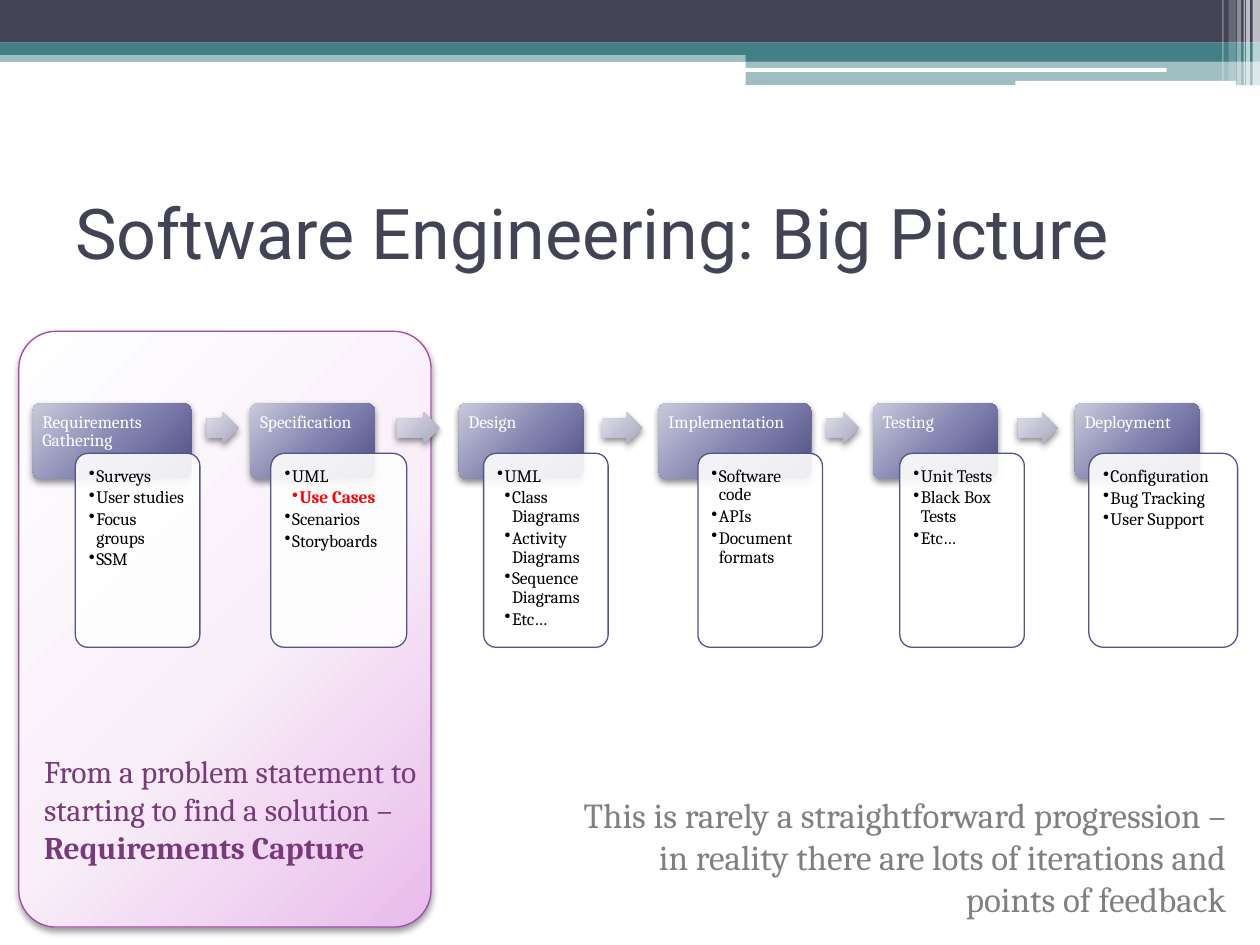
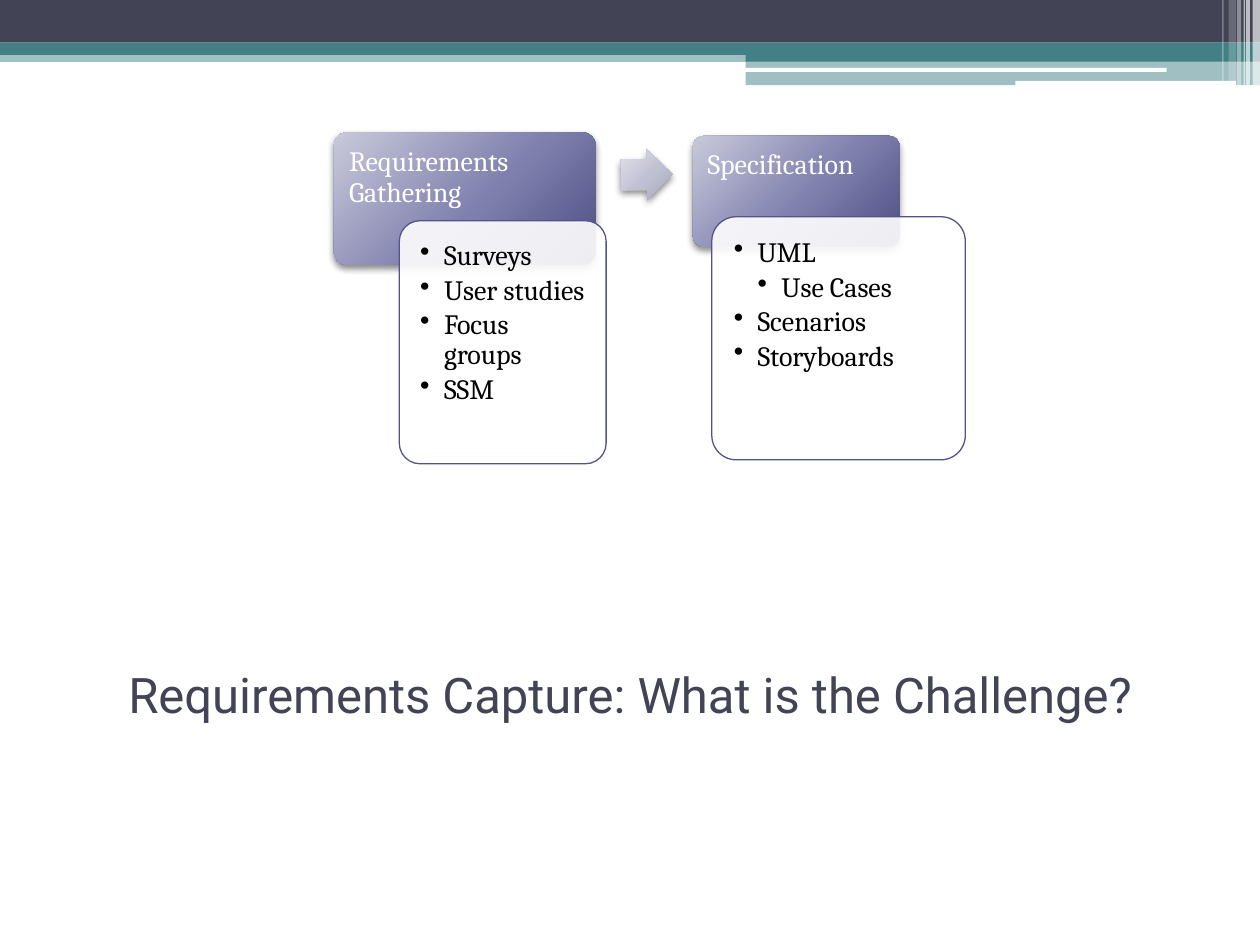
from lxml import etree
from pptx import Presentation
from pptx.dml.color import RGBColor
from pptx.enum.shapes import MSO_SHAPE
from pptx.enum.text import MSO_ANCHOR, PP_ALIGN
from pptx.oxml.ns import nsdecls, qn
from pptx.util import Cm, Pt

RECT = MSO_SHAPE.RECTANGLE
ROUND = MSO_SHAPE.ROUNDED_RECTANGLE
ARROW = MSO_SHAPE.RIGHT_ARROW
TOP, MIDDLE = MSO_ANCHOR.TOP, MSO_ANCHOR.MIDDLE
LEFT, CENTER, RIGHT = PP_ALIGN.LEFT, PP_ALIGN.CENTER, PP_ALIGN.RIGHT

NAVY = RGBColor(0x42, 0x44, 0x56)
TEAL = RGBColor(0x43, 0x80, 0x86)
WHITE = RGBColor(0xFF, 0xFF, 0xFF)
BLACK = RGBColor(0, 0, 0)
RED = RGBColor(0xFF, 0, 0)
GREY = RGBColor(0x80, 0x80, 0x80)
INDIGO = RGBColor(0x53, 0x54, 0x8A)
PURPLE = RGBColor(0xA0, 0x4D, 0xA3)
PLUM = RGBColor(0x78, 0x3A, 0x7A)


def ramp(light, middle, dark):
    colours = (light, middle, dark)
    return tuple(zip((0, 55, 100), map(RGBColor.from_string, colours)))


HEADING_RAMP = ramp("C9C9DA", "7F80AE", "4D4E81")
ARROW_RAMP = ramp("E1E1EA", "C0C0D3", "A7A7B7")
PANEL_RAMP = ramp("FEFEFF", "F9EFF9", "E8BBEA")

BODY_FONT, TITLE_FONT = "Cambria", "Roboto"

BANDS = [
    (RECT, (0, 1.02, 25.4, 0.23), TEAL, 50),
    (RECT, (0, 0, 25.4, 0.86), NAVY, 100),
    (RECT, (0, 0.86, 25.4, 0.25), TEAL, 100),
    (RECT, (15.03, 0.99, 10.37, 0.25), TEAL, 100),
    (RECT, (15.03, 1.23, 10.37, 0.49), TEAL, 50),
    (ROUND, (15.01, 1.37, 8.51, 0.08), WHITE, 100),
    (ROUND, (20.47, 1.63, 4.45, 0.1), WHITE, 100),
    (RECT, (25.25, 0, 0.15, 1.73), WHITE, 65),
    (RECT, (25.12, 0, 0.08, 1.73), WHITE, 65),
    (RECT, (25.07, 0, 0.03, 1.73), WHITE, 60),
    (RECT, (24.94, 0, 0.08, 1.73), WHITE, 40),
    (RECT, (24.77, 0, 0.15, 1.63), WHITE, 20),
    (RECT, (24.64, 0, 0.03, 1.63), WHITE, 30),
]

SURVEYING = ["Surveys", "User studies", "Focus groups", "SSM"]
BIG_PICTURE = [
    ("Requirements Gathering", (0.66, 3.2), (1.52, 2.51), SURVEYING),
    ("Specification", (5.05, 2.51), (5.46, 2.74),
     ["UML", ("Use Cases", {"colour": RED, "bold": True}), "Scenarios", "Storyboards"]),
    ("Design", (9.25, 2.51), (9.75, 2.51),
     ["UML", ("Class Diagrams", {}), ("Activity Diagrams", {}),
      ("Sequence Diagrams", {}), ("Etc…", {})]),
    ("Implementation", (13.28, 3.07), (14.07, 2.51),
     ["Software code", "APIs", "Document formats"]),
    ("Testing", (17.6, 2.51), (18.14, 2.51), ["Unit Tests", "Black Box Tests", "Etc…"]),
    ("Deployment", (21.67, 2.51), (21.95, 3.0),
     ["Configuration", "Bug Tracking", "User Support"]),
]
BIG_PICTURE_ARROWS = [(4.17, 0.64), (8.0, 0.86), (12.14, 0.81), (16.66, 0.66), (20.52, 0.81)]

CAPTURE = [
    ("Requirements Gathering", (6.73, 2.67, 5.28, 2.67), (8.05, 4.45, 4.17, 4.9), SURVEYING),
    ("Specification", (13.97, 2.74, 4.17, 2.24), (14.35, 4.37, 5.11, 4.9),
     ["UML", ("Use Cases", {}), "Scenarios", "Storyboards"]),
]
CAPTURE_ARROW = (12.52, 3.0, 1.04, 1.04)

SMALL = {"size": 10, "heading_inset": 0.15, "card_inset": 0.2, "indent": 0.15}
LARGE = {"size": 16, "heading_inset": 0.23, "card_inset": 0.3, "indent": 0.48}


def add_paint(parent, colour, alpha):
    paint = etree.SubElement(parent, qn("a:srgbClr"), val=str(colour))
    if alpha < 100:
        etree.SubElement(paint, qn("a:alpha"), val=str(alpha * 1000))


def paint_gradient(shape, stops):
    shape.fill.solid()
    solid = shape._element.spPr.find(qn("a:solidFill"))
    gradient = etree.fromstring(
        f'<a:gradFill {nsdecls("a")} rotWithShape="1"><a:gsLst/><a:path path="circle">'
        '<a:fillToRect l="-40000" t="-90000" r="140000" b="190000"/></a:path></a:gradFill>')
    for place, colour in stops:
        stop = etree.SubElement(gradient[0], qn("a:gs"), pos=str(place * 1000))
        add_paint(stop, colour, 100)
    solid.getparent().replace(solid, gradient)


def add_shape(page, kind, place, fill, alpha=100, line=None, shadow=0, adjust=(), turn=0):
    shape = page.shapes.add_shape(kind, *map(Cm, place))
    shape.rotation = turn
    for index, value in enumerate(adjust):
        shape.adjustments[index] = value
    if isinstance(fill, tuple) and not isinstance(fill, RGBColor):
        paint_gradient(shape, fill)
    else:
        shape.fill.solid()
        shape.fill.fore_color.rgb = fill
        if alpha < 100:
            paint = shape._element.spPr.find(qn("a:solidFill"))[0]
            etree.SubElement(paint, qn("a:alpha"), val=str(alpha * 1000))
    if line is None:
        shape.line.fill.background()
    else:
        shape.line.color.rgb = line
        shape.line.width = Pt(0.75)
    shape.shadow.inherit = False
    if shadow:
        effects = shape._element.spPr.find(qn("a:effectLst"))
        outer = etree.SubElement(effects, qn("a:outerShdw"), blurRad=str(Pt(4)),
                                 dist=str(Pt(2)), dir="5400000", rotWithShape="0")
        add_paint(outer, BLACK, shadow)
    return shape


def add_bullet(para, depth, indent):
    para.level = depth
    properties = para._p.get_or_add_pPr()
    properties.set("marL", str(Cm(indent * depth)))
    properties.set("indent", str(-Cm(indent)))
    etree.SubElement(properties, qn("a:buChar"), char="•")


def write(box, paragraphs, size=18, font=BODY_FONT, colour=BLACK, align=LEFT,
          anchor=TOP, insets=None, spacing=None, after=0, indent=None):
    frame = box.text_frame
    frame.word_wrap = True
    frame.vertical_anchor = anchor
    if insets is not None:
        frame.margin_left = frame.margin_right = Cm(insets)
        frame.margin_top = frame.margin_bottom = Cm(insets)
    for index, (depth, spans) in enumerate(paragraphs):
        para = frame.add_paragraph() if index else frame.paragraphs[0]
        para.alignment = align
        para.space_after = Pt(after)
        if spacing:
            para.line_spacing = spacing
        if indent:
            add_bullet(para, depth, indent)
        for text, extra in spans:
            span = para.add_run()
            span.text = text
            span.font.name = font
            span.font.size = Pt(size)
            span.font.bold = extra.get("bold", False)
            span.font.color.rgb = extra.get("colour", colour)


def add_text(page, place, *spans, **style):
    box = page.shapes.add_textbox(*map(Cm, place))
    write(box, [(0, spans)], **style)


def add_title(page, text, top, size, align=LEFT):
    add_text(page, (1.27, top, 22.86, 2.97), (text, {}), size=size, font=TITLE_FONT,
             colour=NAVY, align=align, anchor=MIDDLE)


def add_stage(page, name, heading_place, card_place, items, scale):
    size = scale["size"]
    heading = add_shape(page, ROUND, heading_place, HEADING_RAMP, shadow=45, adjust=(0.1,))
    write(heading, [(0, [(name, {})])], size=size, colour=WHITE,
          insets=scale["heading_inset"], spacing=0.9)
    card = add_shape(page, ROUND, card_place, WHITE, alpha=90, line=INDIGO, adjust=(0.1,))
    bullets = [(1, [(item, {})]) if isinstance(item, str) else (2, [item]) for item in items]
    write(card, bullets, size=size, insets=scale["card_inset"], spacing=0.9,
          after=size * 0.15, indent=scale["indent"])


def add_arrow(page, place, turn=0):
    add_shape(page, ARROW, place, ARROW_RAMP, shadow=45, adjust=(0.6, 0.5), turn=turn)


def add_page(deck):
    page = deck.slides.add_slide(deck.slide_layouts[6])
    for kind, place, colour, alpha in BANDS:
        add_shape(page, kind, place, colour, alpha=alpha)
    return page


def build_big_picture(deck):
    page = add_page(deck)
    add_shape(page, ROUND, (0.38, 6.68, 8.31, 12.01), PANEL_RAMP, line=PURPLE,
              shadow=40, adjust=(0.09,))
    add_title(page, "Software Engineering: Big Picture", 3.18, 40)
    for name, (left, width), (card_left, card_width), items in BIG_PICTURE:
        add_stage(page, name, (left, 8.13, width, 1.52),
                  (card_left, 9.14, card_width, 3.91), items, SMALL)
    for left, width in BIG_PICTURE_ARROWS:
        add_arrow(page, (left, 8.31, width, 0.64))
    add_text(page, (11.43, 15.88, 13.54, 2.82),
             ("This is rarely a straightforward progression – in reality there are "
              "lots of iterations and points of feedback", {}),
             size=20, colour=GREY, align=RIGHT)
    add_text(page, (0.64, 15.04, 8.05, 3.33),
             ("From a problem statement to starting to find a solution – ", {}),
             ("Requirements Capture", {"bold": True}), size=18, colour=PLUM)


def build_capture(deck):
    page = add_page(deck)
    add_title(page, "Requirements Capture: What is the Challenge?", 12.5, 28, CENTER)
    for stage in CAPTURE:
        add_stage(page, *stage, LARGE)
    add_arrow(page, CAPTURE_ARROW, turn=359.4)


def main():
    deck = Presentation()
    deck.slide_width, deck.slide_height = Cm(25.4), Cm(19.05)
    build_big_picture(deck)
    build_capture(deck)
    deck.save("out.pptx")


if __name__ == "__main__":
    main()
